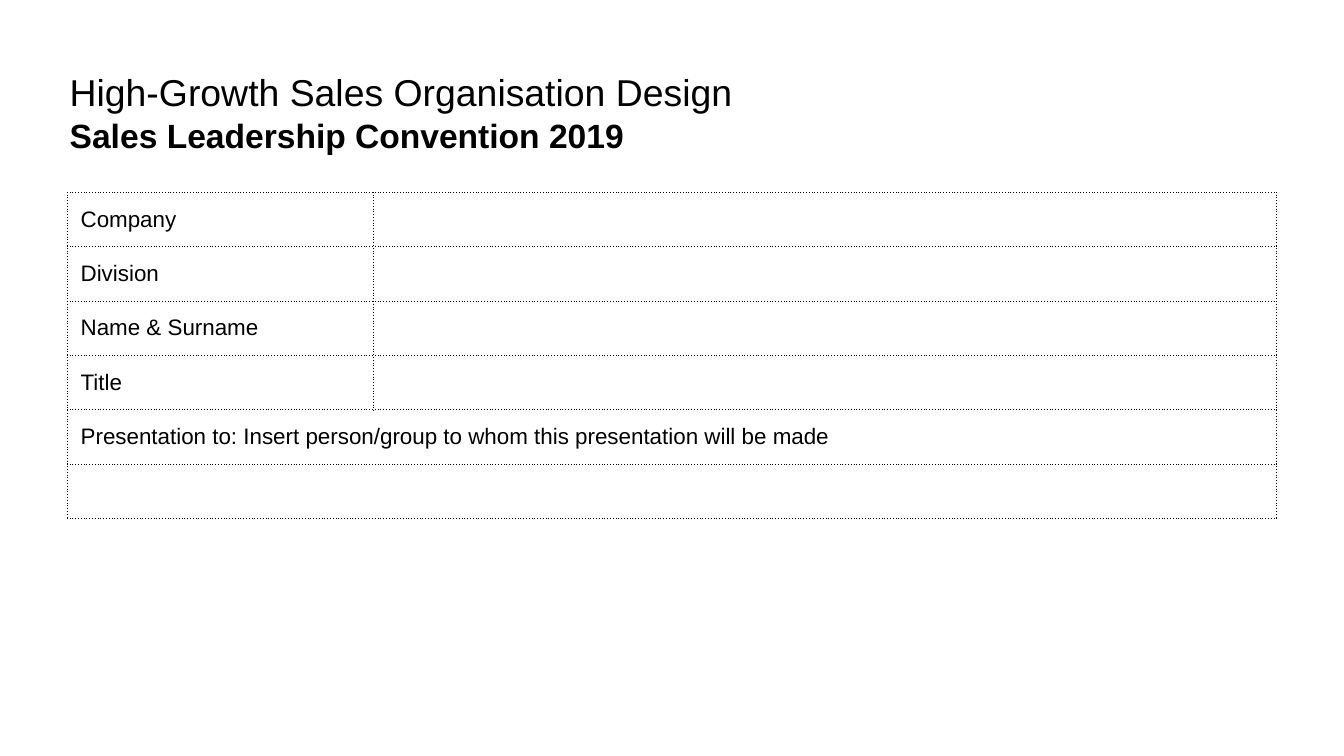
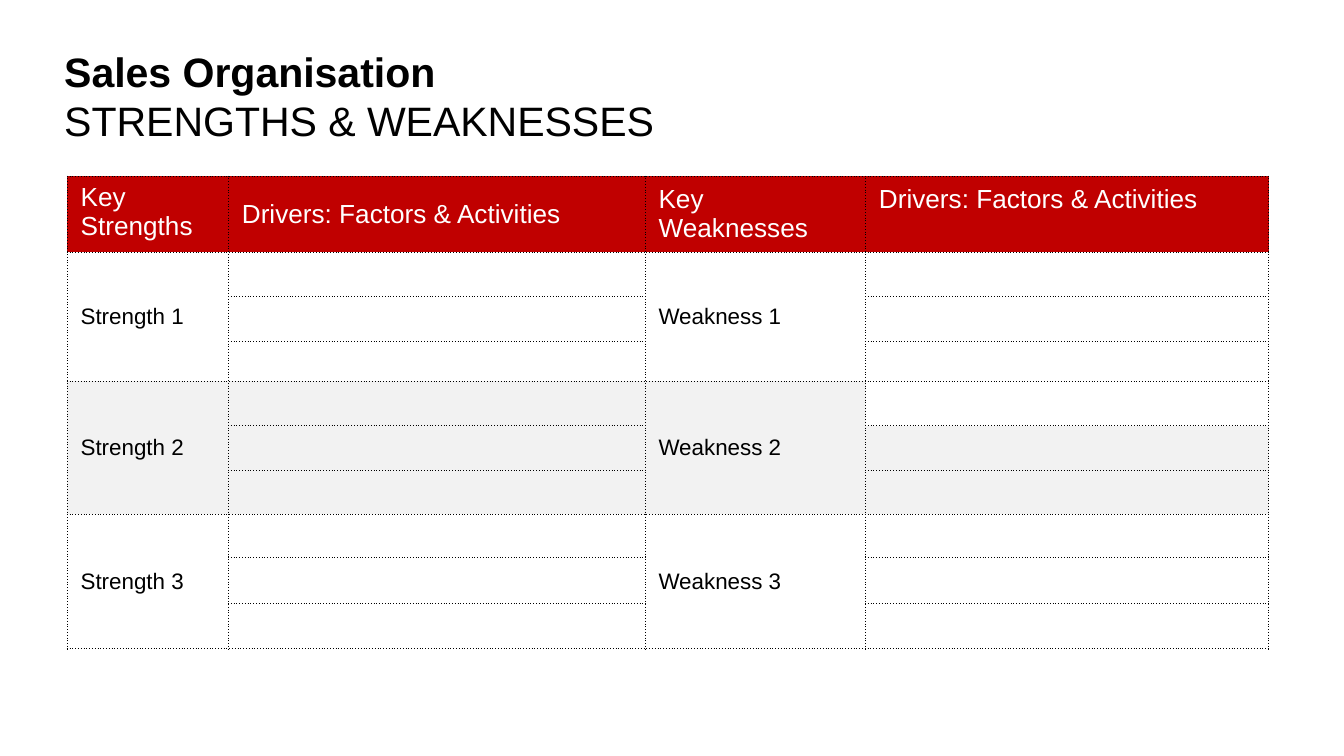
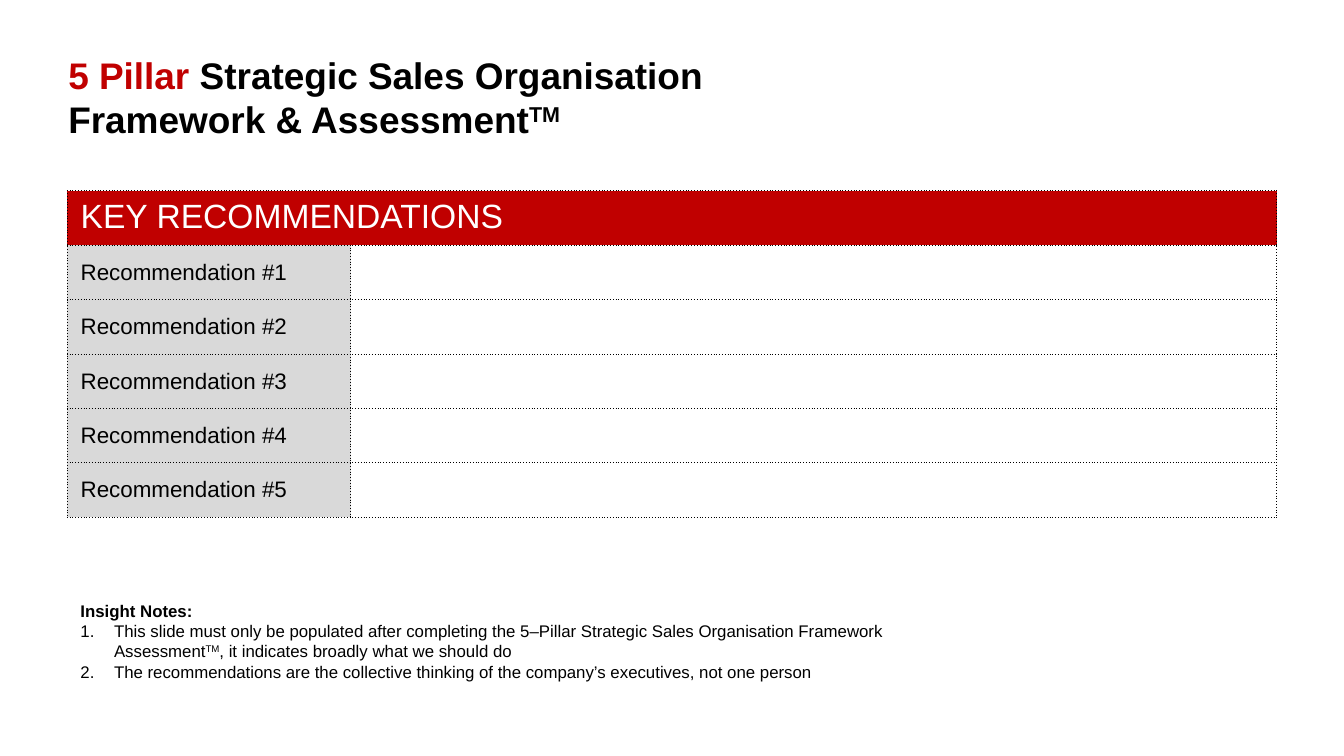
"""Build a three-slide sales organisation template deck."""
from lxml import etree
from pptx import Presentation, util as u
from pptx.dml.color import RGBColor
from pptx.enum import text
from pptx.oxml.ns import qn

FONT = "Arial"
BLACK, WHITE, RED, PALE, GREY = "000000", "FFFFFF", "C00000", "F2F2F2", "D9D9D9"
MIDDLE, TOP = text.MSO_ANCHOR.MIDDLE, text.MSO_ANCHOR.TOP
LEFT = 0.5
FORM_ROWS = [2.43 / 6] * 6

COVER_TITLE = [
    [("High-Growth Sales Organisation Design", {"size": 20})],
    [("Sales Leadership Convention 2019", {"size": 18, "bold": True})],
]
COVER_FIELDS = ["Company", "Division", "Name & Surname", "Title"]
AUDIENCE = "Presentation to: Insert person/group to whom this presentation will be made"

SWOT_TITLE = [
    [("Sales Organisation", {"size": 22, "bold": True})],
    [("STRENGTHS & WEAKNESSES", {"size": 22})],
]
SWOT_HEADERS = [
    ("Key Strengths", TOP),
    ("Drivers: Factors & Activities", MIDDLE),
    ("Key Weaknesses", MIDDLE),
    ("Drivers: Factors & Activities", MIDDLE),
]
SWOT_COLS = [1.2, 3.1, 1.64, 3]
SWOT_ROWS = [0.56, 0.33, 0.33, 0.3, 0.33, 0.33, 0.33, 0.32, 0.34, 0.34]

PILLAR = {"size": 19.8, "bold": True}
PILLAR_TITLE = [
    [("5 Pillar ", {**PILLAR, "color": RED}), ("Strategic Sales Organisation", PILLAR)],
    [("Framework & Assessment", PILLAR), ("TM", {**PILLAR, "raised": True})],
]
NOTE = {"size": 9}
NOTES_HEADING = ("Insight Notes:", {"size": 9, "bold": True})
NOTES = [
    [("This slide must only be populated after completing the 5–Pillar Strategic "
      "Sales Organisation Framework Assessment", NOTE),
     ("TM", {"size": 9, "raised": True}),
     (", it indicates broadly what we should do", NOTE)],
    [("The recommendations are the collective thinking of the company’s executives, "
      "not one person", NOTE)],
]


def rgb(color):
    return RGBColor.from_string(color)


def add_run(p, words, size=12, color=BLACK, bold=False, raised=False):
    r = p.add_run()
    r.text = words
    r.font.name, r.font.size, r.font.bold = FONT, u.Pt(size), bold
    r.font.color.rgb = rgb(color)
    if raised:
        r.font._element.set("baseline", "30000")


def add_box(s, left, top, width, height):
    sp = s.shapes.add_textbox(*map(u.Inches, (left, top, width, height)))
    tf = sp.text_frame
    tf.word_wrap = True
    return tf


def add_title(s, lines, left, top, width, height):
    tf = add_box(s, left, top, width, height)
    tf.vertical_anchor = MIDDLE
    p = tf.paragraphs[0]
    for i, line in enumerate(lines):
        if i:
            p.add_line_break()
        for words, style in line:
            add_run(p, words, **style)
    return tf


def add_borders(cell):
    tc_pr = cell._tc.get_or_add_tcPr()
    for side in ("a:lnL", "a:lnR", "a:lnT", "a:lnB"):
        ln = etree.SubElement(tc_pr, qn(side), w=str(u.Pt(0.5)))
        fill = etree.SubElement(ln, qn("a:solidFill"))
        etree.SubElement(fill, qn("a:srgbClr"), val=BLACK)
        etree.SubElement(ln, qn("a:prstDash"), val="sysDot")


def add_grid(s, top, cols, rows):
    frame = s.shapes.add_table(len(rows), len(cols), *map(
        u.Inches, (LEFT, top, sum(cols), sum(rows))))
    table = frame.table
    table.first_row = table.horz_banding = False
    for col, width in zip(table.columns, cols):
        col.width = u.Inches(width)
    for row, height in zip(table.rows, rows):
        row.height = u.Inches(height)
    for cell in table.iter_cells():
        add_borders(cell)
        cell.fill.background()
        cell.vertical_anchor = MIDDLE
        etree.SubElement(cell.text_frame.paragraphs[0]._p, qn("a:endParaRPr"), sz="1200")
    return table


def paint(cell, color):
    cell.fill.solid()
    cell.fill.fore_color.rgb = rgb(color)


def write(cell, words, fill=None, anchor=MIDDLE, **style):
    add_run(cell.text_frame.paragraphs[0], words, **style)
    cell.vertical_anchor = anchor
    if fill:
        paint(cell, fill)


def cover(s):
    table = add_grid(s, 1.43, [2.28, 6.72], FORM_ROWS)
    for i, field in enumerate(COVER_FIELDS):
        write(table.cell(i, 0), field)
    for i in (4, 5):
        table.cell(i, 0).merge(table.cell(i, 1))
    write(table.cell(4, 0), AUDIENCE)
    add_title(s, COVER_TITLE, 0.42, 0.45, 8.88, 0.77)


def strengths_weaknesses(s):
    add_title(s, SWOT_TITLE, 0.38, 0.24, 9, 0.94)
    table = add_grid(s, 1.31, SWOT_COLS, SWOT_ROWS)
    for c, (header, anchor) in enumerate(SWOT_HEADERS):
        write(table.cell(0, c), header, RED, anchor, size=14, color=WHITE)
    table.cell(0, 3).margin_bottom = u.Inches(0.27)
    for n in (1, 2, 3):
        first = 3 * n - 2
        fill = PALE if n == 2 else WHITE
        for r in range(first, first + 3):
            for c in range(4):
                paint(table.cell(r, c), fill)
        for c, name in ((0, "Strength"), (2, "Weakness")):
            table.cell(first, c).merge(table.cell(first + 2, c))
            write(table.cell(first, c), f"{name} {n}")
    paint(table.cell(4, 3), WHITE)


def recommendations(s):
    table = add_grid(s, 1.42, [2.11, 6.89], FORM_ROWS)
    table.cell(0, 0).merge(table.cell(0, 1))
    write(table.cell(0, 0), "KEY RECOMMENDATIONS", RED, TOP, size=18, color=WHITE)
    for n in range(1, 6):
        write(table.cell(n, 0), f"Recommendation #{n}", GREY)
    title = add_title(s, PILLAR_TITLE, 0.41, 0.43, 9, 0.94)
    title.margin_top, title.margin_bottom = 0, u.Inches(0.36)

    tf = add_box(s, LEFT, 4.42, 6.71, 0.71)
    tf.auto_size = text.MSO_AUTO_SIZE.SHAPE_TO_FIT_TEXT
    heading, heading_style = NOTES_HEADING
    add_run(tf.paragraphs[0], heading, **heading_style)
    for note in NOTES:
        p = tf.add_paragraph()
        p_pr = p._p.get_or_add_pPr()
        p_pr.set("marL", str(u.Inches(0.25)))
        p_pr.set("indent", str(-u.Inches(0.25)))
        etree.SubElement(p_pr, qn("a:buFont"), typeface=FONT)
        etree.SubElement(p_pr, qn("a:buAutoNum"), type="arabicPeriod")
        for words, style in note:
            add_run(p, words, **style)


def main():
    prs = Presentation()
    prs.slide_width = u.Inches(10)
    prs.slide_height = prs.slide_width * 9 // 16
    for build in (cover, strengths_weaknesses, recommendations):
        build(prs.slides.add_slide(prs.slide_layouts[6]))
    prs.save("out.pptx")


if __name__ == "__main__":
    main()
